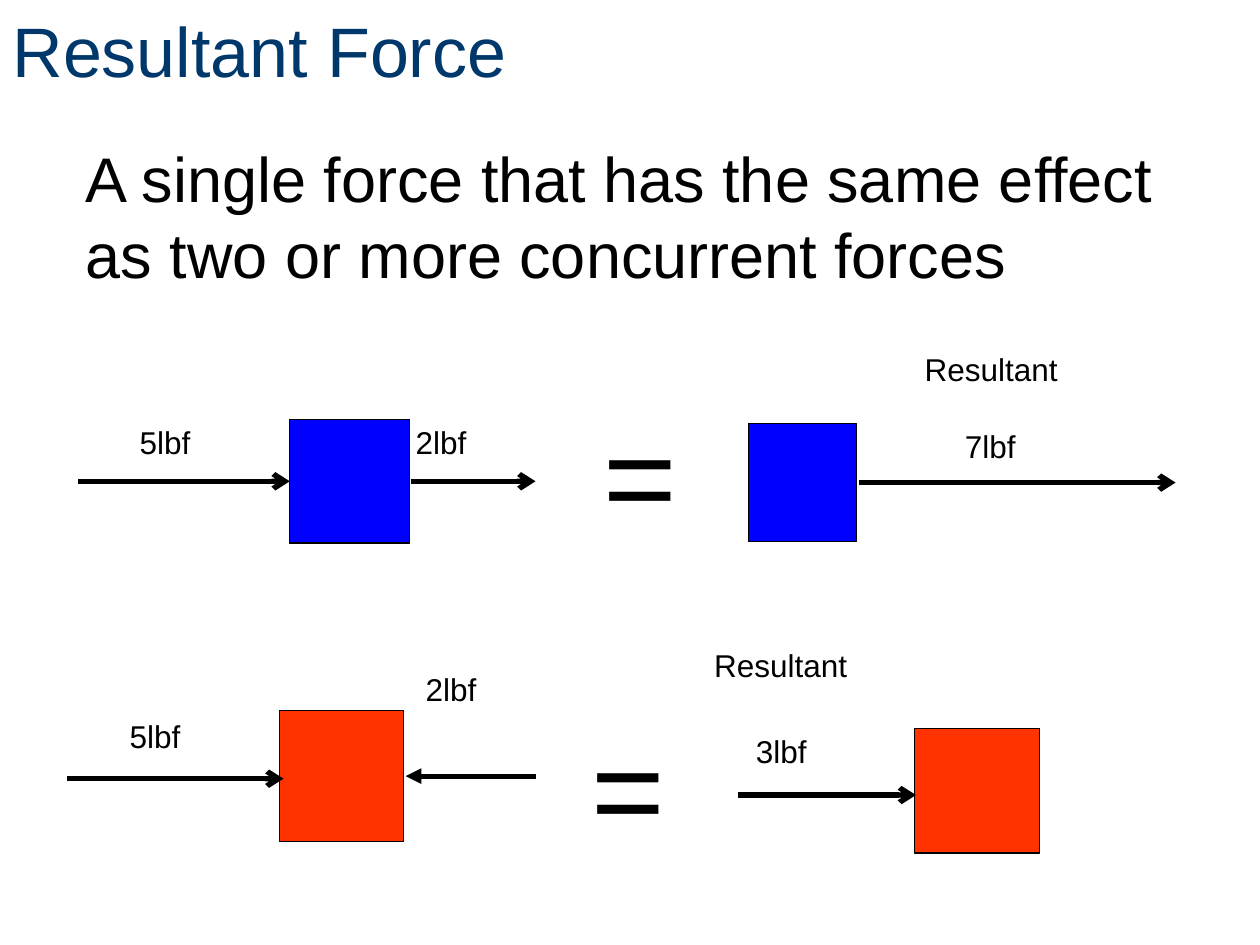
import pptx
import pptx.util
import pptx.dml.color
import pptx.enum.dml
import pptx.enum.shapes
import pptx.enum.text
import pptx.oxml
import pptx.oxml.ns

COLUMNS, ROWS = 100, 75
BLACK, BLUE, RED, NAVY = "000000", "0000FF", "FF3300", "00386B"
Anchor = pptx.enum.text.MSO_ANCHOR
AutoSize = pptx.enum.text.MSO_AUTO_SIZE


def colour(value):
    return pptx.dml.color.RGBColor.from_string(value)


def set_all(target, values):
    for name, value in values.items():
        setattr(target, name, value)


class ForceSlide:
    """Style and current slide; lengths are columns and rows of the grid."""

    def __init__(self, deck):
        self.cell_width = deck.slide_width / COLUMNS
        self.cell_height = deck.slide_height / ROWS
        self.page = deck.slides.add_slide(deck.slide_layouts[1])
        self.shapes = self.page.shapes

    def place(self, *numbers):
        sizes = (self.cell_width, self.cell_height) * 2
        return [round(number * size) for number, size in zip(numbers, sizes)]

    def start_group(self):
        self.shapes = self.page.shapes.add_group_shape().shapes

    def end_group(self):
        self.shapes = self.page.shapes

    def set_text(self, box, text, size, ink=BLACK, anchor=Anchor.TOP, fit=AutoSize.NONE):
        set_all(box.text_frame, {"word_wrap": True, "auto_size": fit,
                                 "vertical_anchor": anchor})
        para = box.text_frame.paragraphs[0]
        set_all(para, {"alignment": pptx.enum.text.PP_ALIGN.LEFT,
                       "space_before": pptx.util.Pt(0)})
        span = para.add_run()
        span.text = text
        set_all(span.font, {"name": "Arial", "size": pptx.util.Pt(size)})
        span.font.color.rgb = colour(ink)
        return para

    def fill_placeholder(self, index, area, text, size, **style):
        box = self.page.placeholders[index]
        set_all(box, dict(zip(("left", "top", "width", "height"), self.place(*area))))
        return self.set_text(box, text, size, **style)

    def title(self, area, text):
        self.fill_placeholder(0, area, text, 40, ink=NAVY, anchor=Anchor.MIDDLE)

    def body(self, area, text, indent):
        para = self.fill_placeholder(1, area, text, 36)
        properties = para._p.get_or_add_pPr()
        properties.set("marL", str(round(indent * self.cell_width)))
        properties.set("indent", "0")
        properties.append(pptx.oxml.parse_xml(
            f"<a:buNone {pptx.oxml.ns.nsdecls('a')}/>"))

    def label(self, area, text, size=18):
        box = self.shapes.add_textbox(*self.place(*area))
        self.set_text(box, text, size, fit=AutoSize.SHAPE_TO_FIT_TEXT)

    def block(self, area, fill):
        box = self.shapes.add_shape(
            pptx.enum.shapes.MSO_SHAPE.RECTANGLE, *self.place(*area))
        box.shadow.inherit = False
        box.fill.solid()
        box.fill.fore_color.rgb = colour(fill)
        box.line.color.rgb = colour(BLACK)
        box.line.width = pptx.util.Pt(0.75)

    def arrow(self, start, end, row, tip="tailEnd", kind="arrow"):
        line = self.shapes.add_connector(
            pptx.enum.shapes.MSO_CONNECTOR.STRAIGHT, *self.place(start, row, end, row))
        line.line.color.rgb = colour(BLACK)
        line.line.width = pptx.util.Pt(3)
        namespace = pptx.oxml.ns.nsdecls("a")
        line.line._get_or_add_ln().append(
            pptx.oxml.parse_xml(f'<a:{tip} {namespace} type="{kind}"/>'))
        line._element.spPr.append(pptx.oxml.parse_xml(f"<a:effectLst {namespace}/>"))


def main():
    deck = pptx.Presentation()
    deck.slide_width = pptx.util.Inches(10)
    deck.slide_height = pptx.util.Inches(7.5)
    slide = ForceSlide(deck)

    # Heading and definition
    slide.title((0, 0, 90, 7.8), "Resultant Force")
    slide.body((2, 10.6, 92.8, 13.9), "A single force that has the same effect "
               "as two or more concurrent forces", indent=3.8)

    # Two forces in the same direction
    slide.start_group()
    slide.block((23, 33.3, 9.5, 9.8), BLUE)
    slide.arrow(6.2, 23, 38.2)
    slide.arrow(32.6, 42.5, 38.2)
    slide.label((32, 33.1, 11.6, 6.1), "2lbf")
    slide.label((10.1, 33.1, 11.6, 6.1), "5lbf")

    # Two forces in opposite directions
    slide.start_group()
    slide.block((22.2, 56.4, 9.8, 10.4), RED)
    slide.arrow(5.3, 22.5, 61.8)
    slide.label((9.3, 56.4, 12, 6.5), "5lbf")
    slide.arrow(32.2, 42.5, 61.6, tip="headEnd", kind="triangle")
    slide.label((32.8, 52.7, 12, 6.5), "2lbf")

    # Sum of the forces
    slide.start_group()
    slide.block((59.4, 33.6, 8.6, 9.4), BLUE)
    slide.arrow(68.2, 93.3, 38.3)
    slide.label((75.6, 33.4, 10.5, 5.8), "7lbf")
    slide.label((72.4, 27.3, 19.5, 5.8), "Resultant")

    # Difference of the forces
    slide.start_group()
    slide.block((72.6, 57.8, 9.9, 9.9), RED)
    slide.arrow(58.6, 72.7, 63.1)
    slide.label((59, 57.6, 12.1, 6.1), "3lbf")
    slide.label((55.7, 50.8, 22.5, 6.1), "Resultant")
    slide.end_group()

    # Equals signs
    for column, row in ((46.9, 31), (46, 55.8)):
        slide.label((column, row, 8.7, 13.1), "=", size=72)

    deck.save("out.pptx")


if __name__ == "__main__":
    main()
